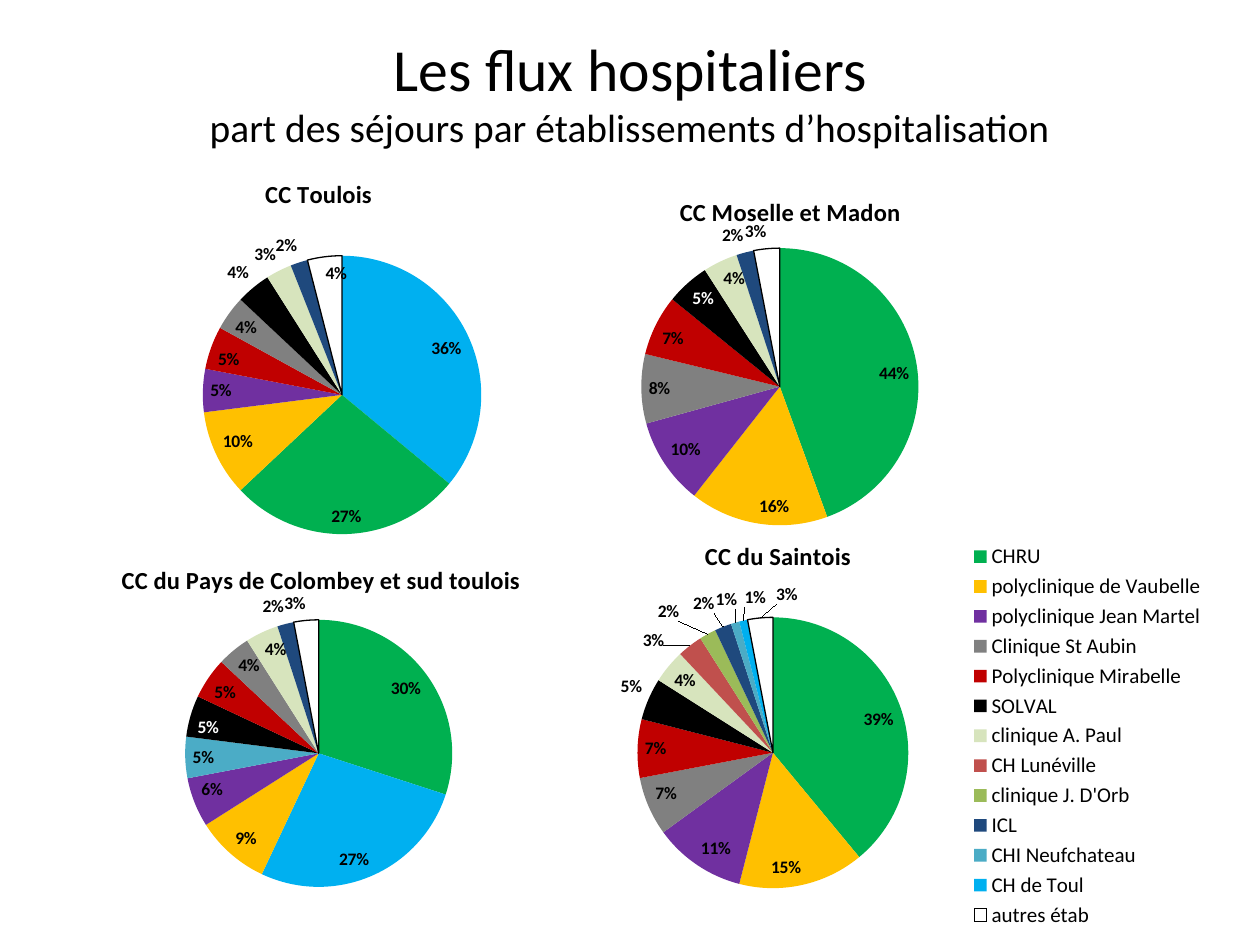
from lxml import etree
from pptx import Presentation
from pptx.chart.data import CategoryChartData
from pptx.dml.color import RGBColor
from pptx.enum import chart as ch, text as tx
from pptx.oxml.ns import qn
from pptx.util import Inches, Pt

FONT = "Calibri"
BLACK = RGBColor(0, 0, 0)
WHITE = RGBColor(255, 255, 255)
IN = ch.XL_LABEL_POSITION.INSIDE_END
OUT = ch.XL_LABEL_POSITION.OUTSIDE_END

HEADING = [("Les flux hospitaliers", 34.1),
           ("part des séjours par établissements d’hospitalisation", 22.5)]

# key: (name, slice colour)
SITES = {
    "chru": ("CHRU", "00B050"),
    "vau": ("polyclinique de Vaubelle", "FFC000"),
    "mar": ("polyclinique Jean Martel", "7030A0"),
    "aub": ("Clinique St Aubin", "808080"),
    "mir": ("Polyclinique Mirabelle", "C00000"),
    "sol": ("SOLVAL", "000000"),
    "paul": ("clinique A. Paul", "D7E4BD"),
    "lun": ("CH Lunéville", "C0504D"),
    "orb": ("clinique J. D'Orb", "9BBB59"),
    "icl": ("ICL", "1F497D"),
    "chi": ("CHI Neufchateau", "4BACC6"),
    "toul": ("CH de Toul", "00B0F0"),
    "rest": ("autres étab", "FFFFFF"),
}

# frame: left, top, width, height; title: left, top; pie: left, top, size (inches)
# out: labels outside the pie, with their shift in inches
PIES = [
    dict(title="CC du Saintois", frame=(4.61, 4.04, 5.14, 3.46),
         head=(5.56, 4.24), pie=(5.06, 4.9, 2.15), legend=(7.58, 4.28, 2.1, 3.12),
         parts=dict(chru=39, vau=15, mar=11, aub=7, mir=7, sol=5, paul=4,
                    lun=3, orb=2, icl=2, chi=1, toul=1, rest=3),
         out=dict(sol=(0, 0), lun=(-0.17, 0.08), orb=(-0.2, -0.05),
                  icl=(-0.05, -0.05), chi=(0.03, -0.05),
                  toul=(0.19, -0.05), rest=(0.3, -0.05)), pale=()),
    dict(title="CC Moselle et Madon", frame=(4.13, 1.31, 4.09, 2.96),
         head=(5.36, 1.51), pie=(5.09, 1.97, 2.2),
         parts=dict(chru=44, vau=16, mar=10, aub=8, mir=7, sol=5, paul=4,
                    icl=2, rest=3),
         out=dict(icl=(0, 0), rest=(0, 0)), pale=("sol",)),
    dict(title="CC du Pays de Colombey et sud toulois",
         frame=(0.35, 4.06, 4.17, 3.15), head=(0.93, 4.43), pie=(1.47, 4.92, 2.12),
         parts=dict(chru=30, toul=27, vau=9, mar=6, chi=5, sol=5, mir=5,
                    aub=4, paul=4, icl=2, rest=3),
         out=dict(icl=(0, 0), rest=(0, 0)), pale=("sol",)),
    dict(title="CC Toulois", frame=(0.83, 1.23, 3.53, 3.15),
         head=(2.07, 1.37), pie=(1.61, 2.03, 2.21),
         parts=dict(toul=36, chru=27, vau=10, mar=5, mir=5, aub=4, sol=4,
                    paul=3, icl=2, rest=4),
         out=dict(sol=(0, 0), paul=(0, 0), icl=(0, 0)), pale=()),
]


def set_layout(node, after, **attrs):
    """Give a chart part a manual layout, placed behind the child named after."""
    for old in node.findall(qn("c:layout")):
        node.remove(old)
    layout = etree.Element(qn("c:layout"))
    manual = etree.SubElement(layout, qn("c:manualLayout"))
    for name, val in attrs.items():
        text = val if isinstance(val, str) else f"{val:.4f}"
        etree.SubElement(manual, qn("c:" + name)).set("val", text)
    if after:
        node.find(qn(after)).addnext(layout)
    else:
        node.insert(0, layout)


def style(font, size, color=BLACK, bold=False):
    font.name, font.size, font.bold = FONT, Pt(size), bold
    font.color.rgb = color


def add_pie(slide, pie):
    left, top, wide, high = pie["frame"]
    edge = dict(xMode="edge", yMode="edge")

    def spot(x, y):
        return dict(x=(x - left) / wide, y=(y - top) / high)

    def area(x, y, w, h):
        return dict(edge, **spot(x, y), w=w / wide, h=h / high)

    data = CategoryChartData(number_format="0%")
    data.categories = [SITES[key][0] for key in pie["parts"]]
    data.add_series("Series 1", [part / 100 for part in pie["parts"].values()])
    chart = slide.shapes.add_chart(
        ch.XL_CHART_TYPE.PIE, *map(Inches, pie["frame"]), data).chart
    style(chart.font, 10)
    back = etree.Element(qn("c:spPr"))
    etree.SubElement(back, qn("a:noFill"))
    line = etree.SubElement(back, qn("a:ln"))
    etree.SubElement(line, qn("a:noFill"))
    chart.element.find(qn("c:chart")).addnext(back)

    chart.has_title = True
    run = chart.chart_title.text_frame.paragraphs[0].add_run()
    run.text = pie["title"]
    style(run.font, 14, bold=True)
    root = chart.element.find(qn("c:chart"))
    set_layout(root.find(qn("c:title")), "c:tx", **edge, **spot(*pie["head"]))
    x, y, size = pie["pie"]
    set_layout(root.find(qn("c:plotArea")), None,
               layoutTarget="inner", **area(x, y, size, size))

    chart.has_legend = "legend" in pie
    if chart.has_legend:
        chart.legend.position = ch.XL_LEGEND_POSITION.RIGHT
        chart.legend.include_in_layout = False
        style(chart.legend.font, 12)
        set_layout(root.find(qn("c:legend")), "c:legendPos", **area(*pie["legend"]))

    plot = chart.plots[0]
    plot.vary_by_categories = True
    series = plot.series[0]
    labels = series.data_labels
    labels.show_value = True
    labels.number_format, labels.number_format_is_linked = "0%", False
    labels.position = IN
    style(labels.font, 10, bold=True)

    for i, key in enumerate(pie["parts"]):
        point = series.points[i]
        point.format.fill.solid()
        point.format.fill.fore_color.rgb = RGBColor.from_string(SITES[key][1])
        if key == "rest":
            point.format.line.color.rgb = BLACK
            point.format.line.width = Pt(0.75)
        else:
            point.format.line.fill.background()
        if key in pie["out"] or key in pie["pale"]:
            label = point.data_label
            style(label.font, 10, WHITE if key in pie["pale"] else BLACK, True)
            label.position = OUT if key in pie["out"] else IN
            dx, dy = pie["out"].get(key, (0, 0))
            if dx or dy:
                node = labels._element.findall(qn("c:dLbl"))[-1]
                set_layout(node, "c:idx", x=dx / wide, y=dy / high)


def add_heading(slide):
    frame = slide.shapes.add_textbox(*map(Inches, (0.5, 0.3, 9, 0.85))).text_frame
    frame.word_wrap = True
    frame.vertical_anchor = tx.MSO_ANCHOR.MIDDLE
    for i, (words, size) in enumerate(HEADING):
        para = frame.add_paragraph() if i else frame.paragraphs[0]
        para.alignment = tx.PP_ALIGN.CENTER
        run = para.add_run()
        run.text = words
        style(run.font, size)


def main():
    deck = Presentation()
    deck.slide_width, deck.slide_height = Inches(10), Inches(7.5)
    slide = deck.slides.add_slide(deck.slide_layouts[6])
    add_heading(slide)
    for pie in PIES:
        add_pie(slide, pie)
    deck.save("out.pptx")


if __name__ == "__main__":
    main()
